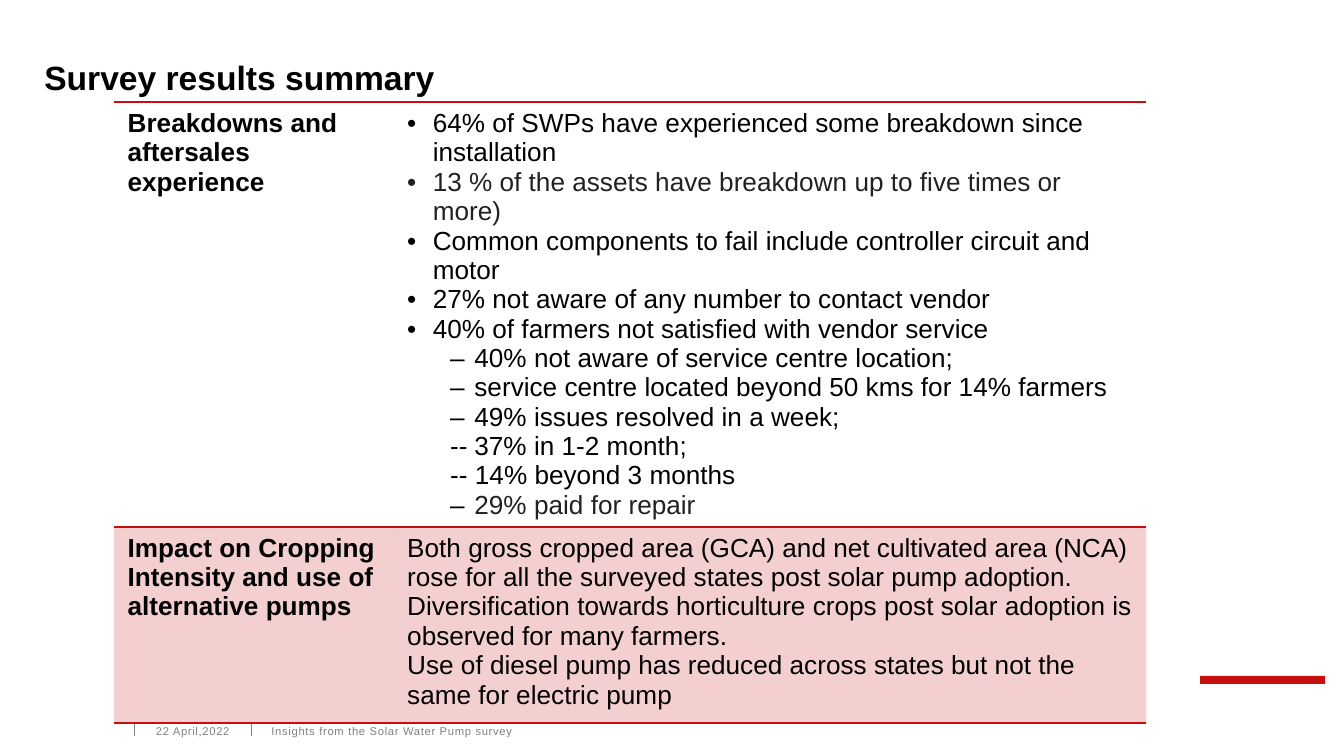
from lxml.etree import SubElement
from pptx import Presentation
from pptx.dml.color import RGBColor
from pptx.enum.shapes import MSO_CONNECTOR, MSO_SHAPE
from pptx.enum.text import MSO_ANCHOR, PP_ALIGN
from pptx.oxml.ns import qn
from pptx.util import Inches, Pt

# Content: each point is (kind, lead, text, colour)
TITLE = "Survey results summary"
ROWS = [
    ("Breakdowns and aftersales experience", [
        ("dot", "", "64% of SWPs have experienced some breakdown since installation", "black"),
        ("dot", "", "13 % of the assets have breakdown up to five times or more)", "dark"),
        ("dot", "", "Common components to fail include controller circuit and motor", "black"),
        ("dot", "", "27% not aware of any number to contact vendor", "black"),
        ("dot", "", "40% of farmers not satisfied with vendor service", "black"),
        ("sub", "–\t", "40% not aware of service centre location;", "black"),
        ("sub", "–\t", "service centre located beyond 50 kms for 14% farmers", "black"),
        ("sub", "–\t", "49% issues resolved in a week;", "black"),
        ("sub", "--\t", "37% in 1-2 month;", "black"),
        ("sub", "-- ", "14% beyond 3 months", "black"),
        ("sub", "–\t", "29% paid for repair", "dark"),
    ]),
    ("Impact on Cropping Intensity and use of alternative pumps", [
        ("plain", "", "Both gross cropped area (GCA) and net cultivated area (NCA) rose "
                      "for all the surveyed states post solar pump adoption.", "black"),
        ("plain", "", "Diversification towards horticulture crops post solar adoption "
                      "is observed for many farmers.", "black"),
        ("plain", "", "Use of diesel pump has reduced across states but not the same "
                      "for electric pump", "black"),
    ]),
]
# Footer: (tick x, text x, text width, text)
FOOT = [(1, 1.16, 0.58, "22 April,2022"),
        (1.87, 2.02, 6.32, "Insights from the Solar Water Pump survey")]

THEME = {"font": "Arial", "title": 18, "body": 14, "foot": 6,
         "black": "000000", "dark": "232120", "red": "C80F0F", "grey": "808080"}
# Left margin, first-line indent, bullet and tab stop of each kind
KINDS = {"dot": (0.19, -0.19, "•", None), "sub": (0, 0.32, None, 0.54),
         "plain": (0, 0, None, None)}
COLS, HIGH = (2.08, 5.6), (3.16, 1.46)
LEFT, TOP, BASE = 0.85, 0.76, 5.39


def tint(name):
    return RGBColor.from_string(THEME[name])


def write(para, text, size, color="black", bold=False):
    run = para.add_run()
    run.text = text
    font = run.font
    font.name, font.size, font.bold = THEME["font"], Pt(THEME[size]), bold
    font.color.rgb = tint(color)
    return run


def indent(para, kind):
    left, first, mark, stop = KINDS[kind]
    props = para._p.get_or_add_pPr()
    props.set("marL", str(Inches(left)))
    props.set("indent", str(Inches(first)))
    if mark:
        SubElement(props, qn("a:buFont"), typeface=THEME["font"])
        SubElement(props, qn("a:buChar"), char=mark)
    if stop:
        tabs = SubElement(props, qn("a:tabLst"))
        SubElement(tabs, qn("a:tab"), pos=str(Inches(stop)), algn="l")


def flush(frame, anchor, right=0):
    frame.margin_left = frame.margin_top = frame.margin_bottom = 0
    frame.margin_right = Inches(right)
    frame.vertical_anchor = anchor
    frame.word_wrap = True


def border(cell, sides):
    props = cell._tc.get_or_add_tcPr()
    for spot, side in enumerate(sides):
        line = SubElement(props, qn("a:" + side), w=str(Pt(1)))
        fill = SubElement(line, qn("a:solidFill"))
        SubElement(fill, qn("a:srgbClr"), val=THEME["red"])
        props.insert(spot, line)


def shade(cell, tinted):
    if not tinted:
        cell.fill.background()
        return
    cell.fill.solid()
    cell.fill.fore_color.rgb = tint("red")
    color = cell._tc.tcPr.find(".//" + qn("a:srgbClr"))
    SubElement(color, qn("a:alpha"), val="20000")


def main():
    deck = Presentation()
    deck.slide_width = Inches(10)
    deck.slide_height = deck.slide_width * 9 // 16
    slide = deck.slides.add_slide(deck.slide_layouts[5])
    shapes = slide.shapes

    # Accent bar
    bar = shapes.add_shape(MSO_SHAPE.RECTANGLE, Inches(8.93), Inches(5.03),
                           Inches(0.93), Inches(0.06))
    bar.shadow.inherit = False
    bar.fill.solid()
    bar.fill.fore_color.rgb = tint("red")
    bar.line.fill.background()

    # Title
    title = shapes.title
    title.left, title.top = Inches(0.33), Inches(0.14)
    title.width, title.height = Inches(9.5), Inches(0.59)
    flush(title.text_frame, MSO_ANCHOR.BOTTOM, 0.08)
    para = title.text_frame.paragraphs[0]
    para.alignment, para.line_spacing = PP_ALIGN.LEFT, 0.9
    write(para, TITLE, "title", bold=True)

    # Table
    frame = shapes.add_table(len(ROWS), len(COLS), Inches(LEFT), Inches(TOP),
                             Inches(sum(COLS)), Inches(sum(HIGH)))
    table = frame.table
    table.first_row = table.horz_banding = False
    style = table._tbl.tblPr.find(qn("a:tableStyleId"))
    style.text = "{2D5ABB26-0587-4C30-8999-92F81FD0307C}"
    for col, width in zip(table.columns, COLS):
        col.width = Inches(width)
    for num, (head, points) in enumerate(ROWS):
        table.rows[num].height = Inches(HIGH[num])
        name, body = table.rows[num].cells
        for cell in (name, body):
            shade(cell, num % 2)
            border(cell, ("lnT", "lnB"))
        write(name.text_frame.paragraphs[0], head, "body", bold=True)
        for spot, (kind, lead, text, color) in enumerate(points):
            text_frame = body.text_frame
            para = text_frame.add_paragraph() if spot else text_frame.paragraphs[0]
            indent(para, kind)
            if lead:
                write(para, lead, "body")
            write(para, text, "body", color)

    # Footer ticks and text
    for tick, left, width, text in FOOT:
        line = shapes.add_connector(MSO_CONNECTOR.STRAIGHT, Inches(tick), Inches(BASE),
                                    Inches(tick), Inches(BASE + 0.09))
        line.line.color.rgb = tint("grey")
        line.line.width = Pt(0.75)
        SubElement(line._element.spPr, qn("a:effectLst"))
        box = shapes.add_textbox(Inches(left), Inches(BASE), Inches(width), Inches(0.1))
        flush(box.text_frame, MSO_ANCHOR.MIDDLE)
        run = write(box.text_frame.paragraphs[0], text, "foot", "grey")
        run._r.get_or_add_rPr().set("spc", "36")

    deck.save("out.pptx")


if __name__ == "__main__":
    main()
